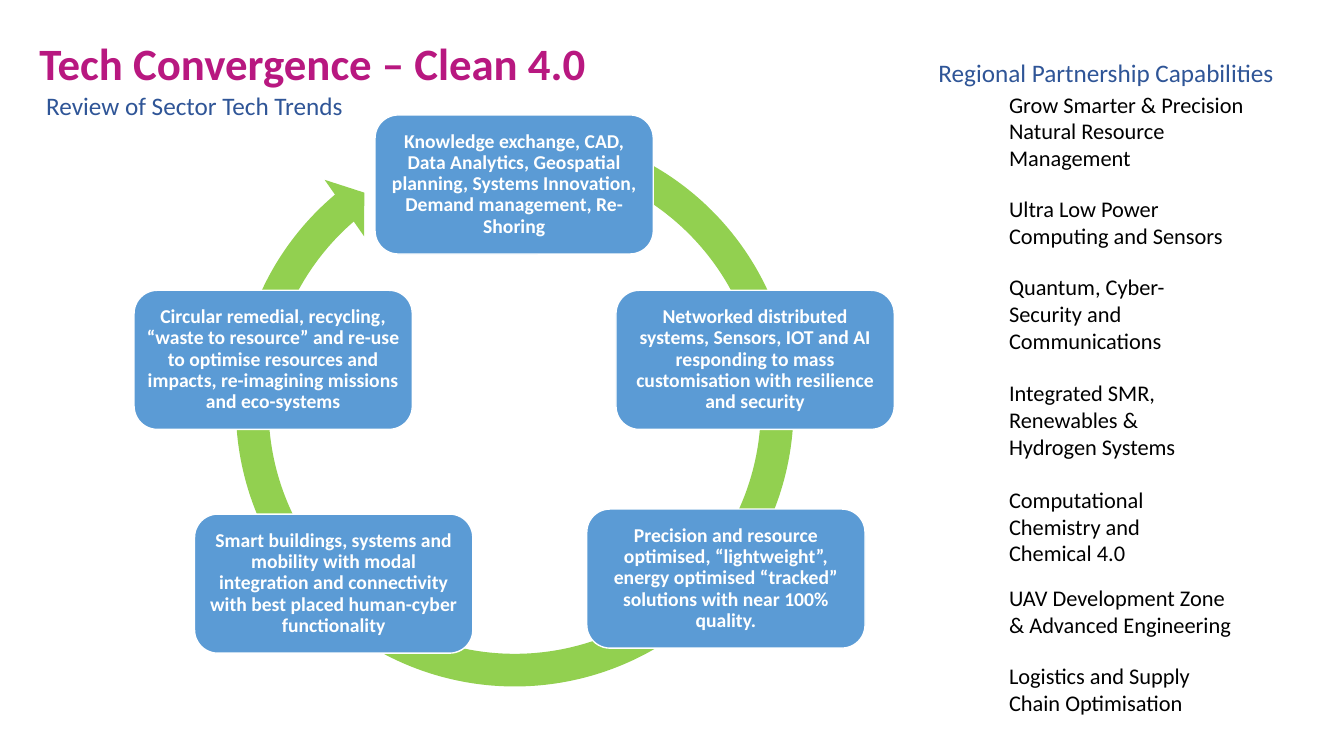
from pptx import Presentation
from pptx.dml.color import RGBColor
from pptx.enum.shapes import MSO_SHAPE
from pptx.enum.text import MSO_ANCHOR, MSO_AUTO_SIZE, PP_ALIGN
from pptx.util import Emu, Pt

PX = 9144  # EMU per px, 100 px to the inch
TITLE_ONLY = 5
ARROW, ROUNDED = MSO_SHAPE.CIRCULAR_ARROW, MSO_SHAPE.ROUNDED_RECTANGLE
LEFT, CENTER = PP_ALIGN.LEFT, PP_ALIGN.CENTER
MIDDLE = MSO_ANCHOR.MIDDLE
GROW, FIXED = MSO_AUTO_SIZE.SHAPE_TO_FIT_TEXT, MSO_AUTO_SIZE.NONE

COLORS = {
    "magenta": "B81880",
    "navy": "2F5597",
    "black": "000000",
    "white": "FFFFFF",
    "blue": "5B9BD5",
    "green": "92D050",
}

CYCLE_ARROW = (216, 110, 589, 589)
CYCLE_ADJUSTMENTS = (0.055, 3.307, 137.725, 173.881, 0.058)
TREND_SIZE = (276, 138)
TRENDS = [
    (372, 114, "Knowledge exchange, CAD, Data Analytics, Geospatial planning, "
               "Systems Innovation, Demand management, Re-Shoring"),
    (611, 288, "Networked distributed systems, Sensors, IOT and AI responding "
               "to mass customisation with resilience and security"),
    (582, 505, "Precision and resource optimised, “lightweight”, energy optimised "
               "“tracked” solutions with near 100% quality."),
    (193, 510, "Smart buildings, systems and mobility with modal integration and "
               "connectivity with best placed human-cyber functionality"),
    (133, 288, "Circular remedial, recycling, “waste to resource” and re-use to "
               "optimise resources and impacts, re-imagining missions and eco-systems"),
]

CAPABILITY_LEFT = 991
CAPABILITIES = [  # top, width, height, wording
    (85, 258, 91, "Grow Smarter & Precision Natural Resource Management"),
    (189, 246, 64, "Ultra Low Power Computing and Sensors"),
    (266, 226, 91, "Quantum, Cyber-Security and Communications"),
    (371, 226, 91, "Integrated SMR, Renewables & Hydrogen Systems"),
    (477, 226, 91, "Computational Chemistry and Chemical 4.0"),
    (575, 246, 64, "UAV Development Zone & Advanced Engineering"),
    (652, 226, 64, "Logistics and Supply Chain Optimisation"),
]


class SlideBuilder:
    font = "Calibri"

    def __init__(self, slide):
        self.slide = slide

    def box(self, *lengths):
        return [Emu(length * PX) for length in lengths]

    def color(self, name):
        return RGBColor.from_string(COLORS[name])

    def add_text(self, frame, text, size, color, bold=False, align=LEFT, spacing=None):
        paragraph = frame.paragraphs[0]
        paragraph.alignment = align
        paragraph.line_spacing = spacing
        run = paragraph.add_run()
        run.text = text
        run.font.name = self.font
        run.font.size = Pt(size)
        run.font.bold = bold
        run.font.color.rgb = self.color(color)

    def title(self, text, bounds):
        heading = self.slide.shapes.title
        heading.left, heading.top, heading.width, heading.height = self.box(*bounds)
        frame = heading.text_frame
        frame.auto_size = FIXED
        frame.vertical_anchor = MIDDLE
        self.add_text(frame, text, 32, "magenta", bold=True, spacing=0.9)

    def label(self, text, bounds, size, color, wrap=True):
        frame = self.slide.shapes.add_textbox(*self.box(*bounds)).text_frame
        frame.word_wrap = wrap
        frame.auto_size = GROW
        self.add_text(frame, text, size, color)

    def shape(self, kind, bounds, fill):
        figure = self.slide.shapes.add_shape(kind, *self.box(*bounds))
        figure.shadow.inherit = False
        figure.fill.solid()
        figure.fill.fore_color.rgb = self.color(fill)
        figure.line.fill.background()
        return figure

    def cycle_arrow(self, bounds, adjustments):
        arrow = self.shape(ARROW, bounds, "green")
        for index, value in enumerate(adjustments):
            arrow.adjustments[index] = value

    def trend(self, text, bounds):
        card = self.shape(ROUNDED, bounds, "blue")
        card.line.color.rgb = self.color("white")
        card.line.width = Pt(1)
        frame = card.text_frame
        frame.word_wrap = True
        frame.vertical_anchor = MIDDLE
        inset, = self.box(6)
        frame.margin_left = frame.margin_right = inset
        frame.margin_top = frame.margin_bottom = inset
        self.add_text(frame, text, 14, "white", bold=True, align=CENTER, spacing=0.9)


def main():
    deck = Presentation()
    deck.slide_width, deck.slide_height = Emu(1333 * PX), Emu(750 * PX)
    page = SlideBuilder(deck.slides.add_slide(deck.slide_layouts[TITLE_ONLY]))

    # Cycle of sector trends
    page.cycle_arrow(CYCLE_ARROW, CYCLE_ADJUSTMENTS)
    for left, top, text in TRENDS:
        page.trend(text, (left, top, *TREND_SIZE))

    # Regional capabilities
    for top, width, height, text in CAPABILITIES:
        page.label(text, (CAPABILITY_LEFT, top, width, height), 16, "black")

    # Headings
    page.title("Tech Convergence – Clean 4.0", (29, 16, 595, 98))
    page.label("Review of Sector Tech Trends", (36, 85, 318, 40), 18, "navy", wrap=False)
    page.label("Regional Partnership Capabilities", (921, 52, 356, 40), 18, "navy", wrap=False)

    deck.save("out.pptx")


if __name__ == "__main__":
    main()
